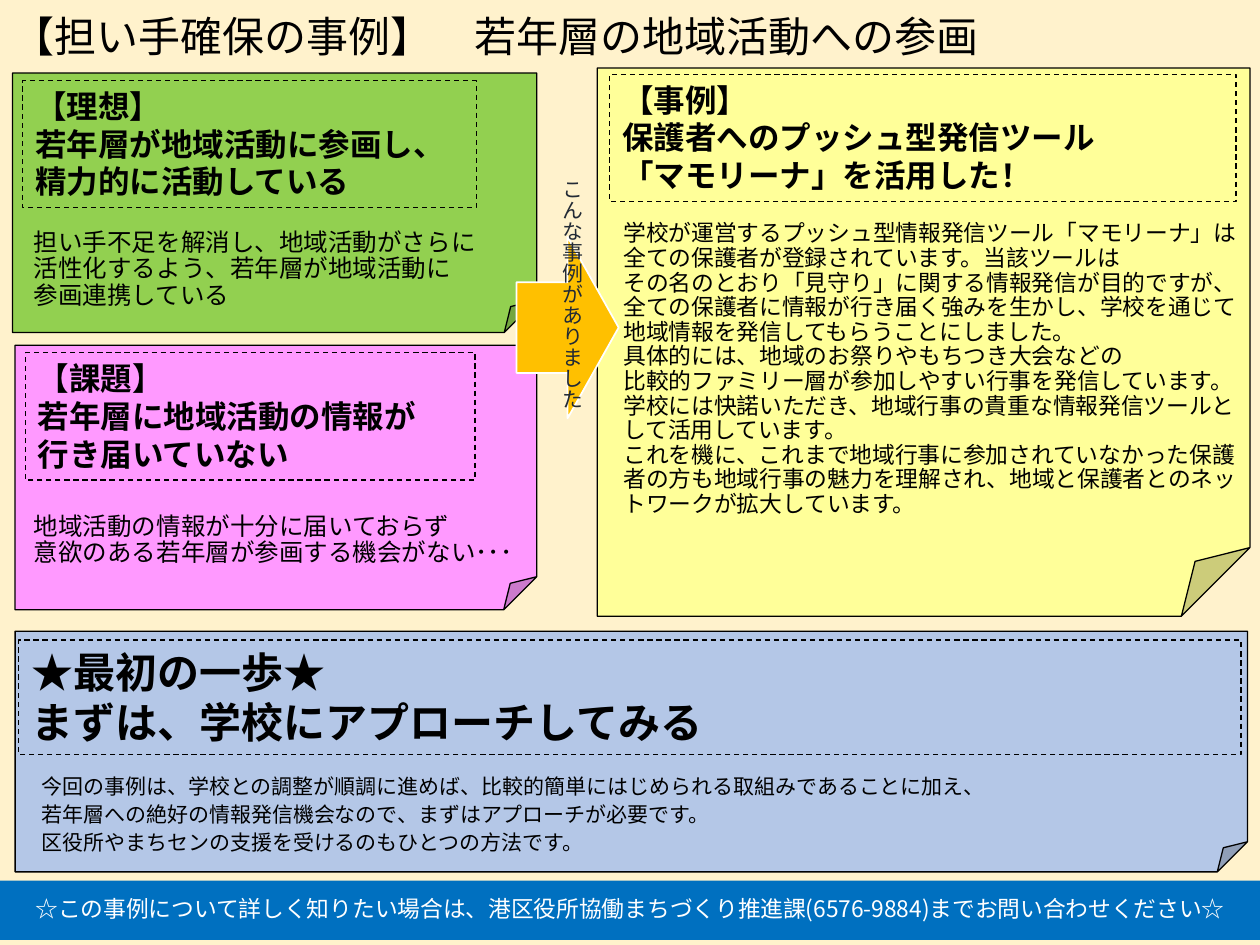
from dataclasses import dataclass

from lxml.etree import SubElement
from pptx import Presentation
from pptx.dml.color import RGBColor
from pptx.enum.dml import MSO_LINE
from pptx.enum.shapes import MSO_SHAPE
from pptx.enum.text import MSO_ANCHOR, MSO_AUTO_SIZE, PP_ALIGN
from pptx.oxml.ns import qn
from pptx.util import Inches, Pt


@dataclass(frozen=True)
class Theme:
    font: str = "Noto Sans CJK JP"
    background: str = "FFF2CC"
    ink: str = "000000"
    white: str = "FFFFFF"
    ideal: str = "92D050"
    issue: str = "FF99FF"
    case: str = "FFFF99"
    first_step: str = "B4C7E7"
    contact: str = "0070C0"
    arrow: str = "FFC000"
    arrow_label: str = "222A35"
    title_size: int = 24
    heading_size: int = 18
    body_size: int = 14
    case_size: int = 13
    small_size: int = 12


THEME = Theme()

presentation = Presentation()
presentation.slide_width = Inches(10)
presentation.slide_height = Inches(7.5)
slide = presentation.slides.add_slide(presentation.slide_layouts[6])
slide.background.fill.solid()
slide.background.fill.fore_color.rgb = RGBColor.from_string(THEME.background)


def add_panel(preset, box, fill=None, line=None, line_width=0.75):
    shape = slide.shapes.add_shape(preset, *map(Inches, box))
    shape.shadow.inherit = False
    if fill:
        shape.fill.solid()
        shape.fill.fore_color.rgb = RGBColor.from_string(fill)
    else:
        shape.fill.background()
    if line:
        shape.line.color.rgb = RGBColor.from_string(line)
        shape.line.width = Pt(line_width)
    else:
        shape.line.fill.background()
    return shape


def write(shape, paragraphs, size, color=THEME.ink, bold=False, spacing=None,
          align=PP_ALIGN.LEFT, anchor=MSO_ANCHOR.MIDDLE):
    """Fill a shape with paragraphs; a newline inside one is a line break."""
    frame = shape.text_frame
    frame.word_wrap = True
    frame.vertical_anchor = anchor
    for index, text in enumerate(paragraphs):
        paragraph = frame.add_paragraph() if index else frame.paragraphs[0]
        paragraph.alignment = align
        paragraph.line_spacing = spacing
        for line_index, line in enumerate(text.split("\n")):
            if line_index:
                paragraph.add_line_break()
            run = paragraph.add_run()
            run.text = line
            run.font.name = THEME.font
            run.font.size = Pt(size)
            run.font.bold = bold
            run.font.color.rgb = RGBColor.from_string(color)
            east_asian = run.font._element.makeelement(
                qn("a:ea"), {"typeface": THEME.font})
            run.font._element.find(qn("a:latin")).addnext(east_asian)


# Title
title = slide.shapes.add_textbox(Inches(0), Inches(-0.01), Inches(8.91), Inches(0.64))
write(title, ["【担い手確保の事例】　若年層の地域活動への参画"], THEME.title_size, spacing=0.9)

# Folded notes
notes = [
    ((0.1, 0.58, 4.16, 2.06), THEME.ideal),
    ((0.12, 2.74, 4.14, 2.1), THEME.issue),
    ((4.74, 0.54, 5.18, 4.35), THEME.case),
    ((0.12, 5.01, 9.78, 1.91), THEME.first_step),
]
for box, fill in notes:
    note = add_panel(MSO_SHAPE.FOLDED_CORNER, box, fill, THEME.ink)
    geometry = note._element.spPr.find(qn("a:prstGeom"))
    SubElement(geometry.find(qn("a:avLst")), qn("a:gd"), name="adj", fmla="val 12500")

# Dashed headings
headings = [
    ((4.84, 0.59, 4.97, 1.01), THEME.heading_size,
     ["【事例】", "保護者へのプッシュ型発信ツール", "「マモリーナ」を活用した！"]),
    ((0.15, 5.08, 9.7, 0.91), THEME.title_size,
     ["★最初の一歩★", "まずは、学校にアプローチしてみる"]),
    ((0.18, 0.64, 3.6, 1.01), THEME.heading_size,
     ["【理想】", "若年層が地域活動に参画し、精力的に活動している"]),
    ((0.2, 2.8, 3.57, 1.01), THEME.heading_size,
     ["【課題】", "若年層に地域活動の情報が", "行き届いていない"]),
]
for box, size, paragraphs in headings:
    heading = add_panel(MSO_SHAPE.RECTANGLE, box, line=THEME.ink)
    heading.line.dash_style = MSO_LINE.DASH
    write(heading, paragraphs, size, bold=True, anchor=MSO_ANCHOR.TOP)
    heading.text_frame.auto_size = MSO_AUTO_SIZE.SHAPE_TO_FIT_TEXT

# Contact bar
contact = add_panel(MSO_SHAPE.RECTANGLE, (0, 6.99, 10, 0.47), THEME.contact)
write(contact,
      ["☆この事例について詳しく知りたい場合は、港区役所協働まちづくり推進課"
       "(6576-9884)までお問い合わせください☆"],
      THEME.case_size, THEME.white, spacing=0.9, align=PP_ALIGN.CENTER)

# Arrow with its vertical label
add_panel(MSO_SHAPE.RIGHT_ARROW, (4.1, 1.88, 0.81, 1.44), THEME.arrow, THEME.white, 1)
label = slide.shapes.add_textbox(Inches(4.29), Inches(1.32), Inches(0.4), Inches(2.51))
write(label, ["こんな事例がありました"], THEME.small_size, THEME.arrow_label,
      align=PP_ALIGN.CENTER, anchor=MSO_ANCHOR.TOP)
label.text_frame.auto_size = MSO_AUTO_SIZE.SHAPE_TO_FIT_TEXT
label.text_frame._txBody.bodyPr.set("vert", "eaVert")

# Body texts
bodies = [
    ((0.17, 1.73, 4.53, 0.82), THEME.body_size, 0.9,
     ["担い手不足を解消し、地域活動がさらに",
      "活性化するよう、若年層が地域活動に",
      "参画連携している"]),
    ((0.17, 3.88, 4.53, 0.82), THEME.body_size, 0.9,
     ["地域活動の情報が十分に届いておらず",
      "意欲のある若年層が参画する機会がない･･･"]),
    ((4.85, 1.4, 5.11, 3.07), THEME.case_size, 0.9,
     ["学校が運営するプッシュ型情報発信ツール「マモリーナ」は"
      "全ての保護者が登録されています。当該ツールは",
      "その名のとおり「見守り」に関する情報発信が目的ですが、",
      "全ての保護者に情報が行き届く強みを生かし、学校を通じて"
      "地域情報を発信してもらうことにしました。",
      "具体的には、地域のお祭りやもちつき大会などの",
      "比較的ファミリー層が参加しやすい行事を発信しています。",
      "学校には快諾いただき、地域行事の貴重な情報発信ツールと"
      "して活用しています。",
      "これを機に、これまで地域行事に参加されていなかった保護"
      "者の方も地域行事の魅力を理解され、地域と保護者とのネッ"
      "トワークが拡大しています。"]),
    ((0.23, 6.04, 9.3, 0.82), THEME.small_size, 1.1,
     ["今回の事例は、学校との調整が順調に進めば、比較的簡単にはじめられる"
      "取組みであることに加え、\n"
      "若年層への絶好の情報発信機会なので、まずはアプローチが必要です。",
      "区役所やまちセンの支援を受けるのもひとつの方法です。"]),
]
for box, size, spacing, paragraphs in bodies:
    body = slide.shapes.add_textbox(*map(Inches, box))
    write(body, paragraphs, size, spacing=spacing)

presentation.save("out.pptx")
